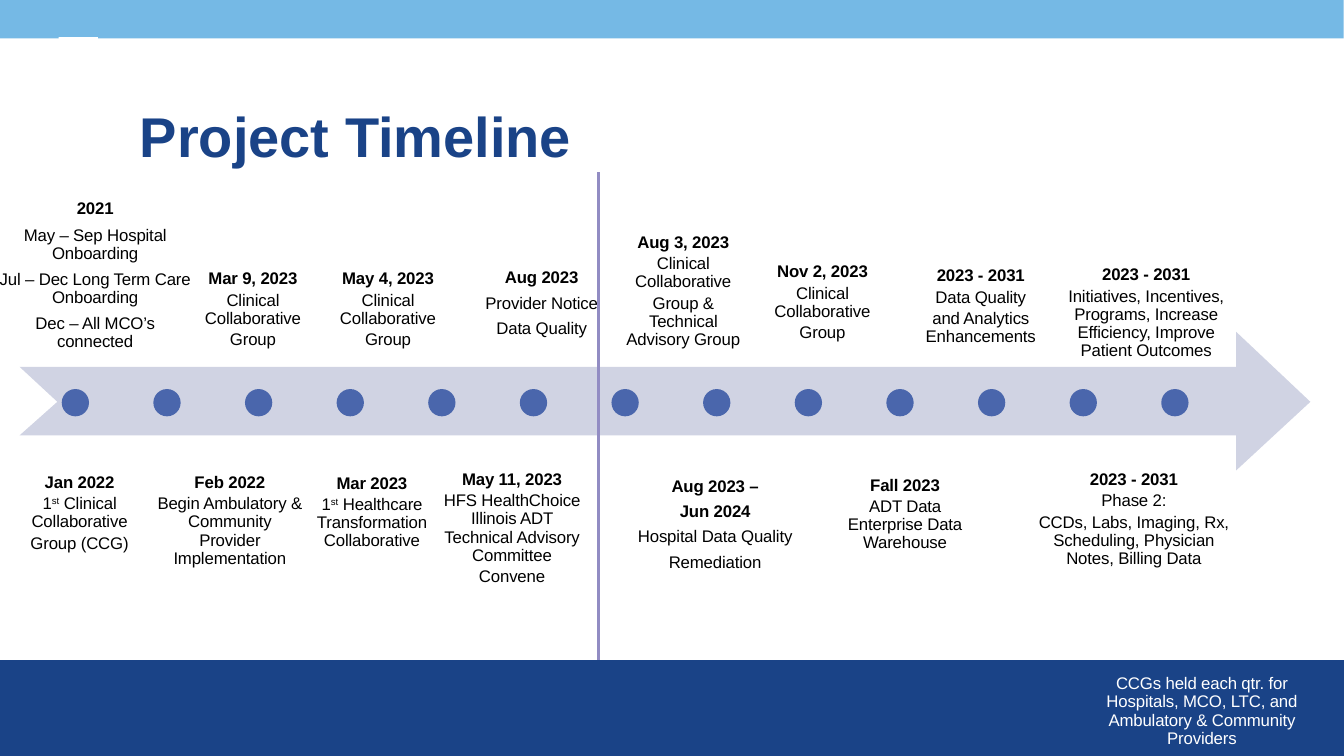
from dataclasses import dataclass
from typing import NamedTuple

from lxml import etree
from pptx import Presentation
from pptx.dml.color import RGBColor
from pptx.enum.shapes import MSO_CONNECTOR, MSO_SHAPE
from pptx.enum.text import MSO_ANCHOR, PP_ALIGN
from pptx.oxml.ns import qn
from pptx.util import Pt

RECT, OVAL = MSO_SHAPE.RECTANGLE, MSO_SHAPE.OVAL
STRAIGHT = MSO_CONNECTOR.STRAIGHT
TOP = MSO_ANCHOR.TOP
LEFT, CENTER = PP_ALIGN.LEFT, PP_ALIGN.CENTER


@dataclass(frozen=True)
class Theme:
    font: str = "Arial"
    navy: RGBColor = RGBColor(0x1A, 0x43, 0x87)
    sky: RGBColor = RGBColor(0x75, 0xB9, 0xE5)
    white: RGBColor = RGBColor(0xFF, 0xFF, 0xFF)
    black: RGBColor = RGBColor(0, 0, 0)
    arrow: RGBColor = RGBColor(0xD0, 0xD3, 0xE3)
    dot: RGBColor = RGBColor(0x4A, 0x66, 0xAC)
    rule: RGBColor = RGBColor(0x92, 0x8C, 0xC3)
    title: float = 40
    body: float = 12


THEME = Theme()


class Box(NamedTuple):
    x: float
    y: float
    w: float
    h: float


class Flow(NamedTuple):
    """Top inset, line spacing and gap before each later paragraph."""
    top: float
    line: float
    gap: float


SNUG = Flow(2.2, 0.9, 2.4)
LOW = Flow(5, 0.9, 2.4)
WIDE = Flow(6.2, 0.9, 5.8)
FIXED = Flow(2.9, Pt(15.1), 2.9)


class Event(NamedTuple):
    """A dated note; the first `heads` lines are bold, ^...^ is raised."""
    box: Box
    flow: Flow
    lines: tuple[str, ...]
    heads: int = 1


CCG = ("Clinical Collaborative", "Group")
EVENTS = (
    Event(Box(-2.2, 136.8, 140.4, 116.6), WIDE,
          ("2021", "May – Sep Hospital Onboarding",
           "Jul – Dec Long Term Care Onboarding", "Dec – All MCO’s connected")),
    Event(Box(126.7, 187.9, 108, 61.9), LOW, ("Mar 9, 2023", *CCG)),
    Event(Box(229.7, 187.9, 95, 61.9), LOW, ("May 4, 2023", *CCG)),
    Event(Box(329, 187.2, 115.9, 53.3), FIXED,
          ("Aug 2023", "Provider Notice", "Data Quality")),
    Event(Box(440.6, 162, 95, 87.8), LOW,
          ("Aug 3, 2023", "Clinical Collaborative",
           "Group & Technical Advisory Group")),
    Event(Box(540, 182.9, 95, 61.9), LOW, ("Nov 2, 2023", *CCG)),
    Event(Box(650.2, 188.6, 100.8, 77.8), SNUG,
          ("2023 - 2031", "Data Quality", "and Analytics Enhancements")),
    Event(Box(751, 187.9, 135.4, 87.8), SNUG,
          ("2023 - 2031", "Initiatives, Incentives, Programs, Increase "
           "Efficiency, Improve Patient Outcomes")),
    Event(Box(-4.3, 336.2, 122.4, 74.2), SNUG,
          ("Jan 2022", "1^st^ Clinical Collaborative", "Group (CCG)")),
    Event(Box(111.2, 336.2, 106, 72), SNUG,
          ("Feb 2022", "Begin Ambulatory & Community Provider Implementation")),
    Event(Box(218.2, 334.1, 95, 59.8), LOW,
          ("Mar 2023", "1^st^ Healthcare Transformation Collaborative")),
    Event(Box(315.4, 334.1, 100.8, 104.4), SNUG,
          ("May 11, 2023", "HFS HealthChoice Illinois ADT Technical Advisory "
           "Committee", "Convene")),
    Event(Box(452.9, 336.2, 115.9, 71.3), FIXED,
          ("Aug 2023 –", "Jun 2024", "Hospital Data Quality", "Remediation"), 2),
    Event(Box(599, 335.5, 95, 59.8), LOW,
          ("Fall 2023", "ADT Data Enterprise Data Warehouse")),
    Event(Box(734.4, 334.1, 151.2, 90.7), SNUG,
          ("2023 - 2031", "Phase 2:", "CCDs, Labs, Imaging, Rx, Scheduling, "
           "Physician Notes, Billing Data")),
)
NOTE = Event(Box(780.5, 480.2, 156.2, 54.7), SNUG,
             ("CCGs held each qtr. for Hospitals, MCO, LTC, and "
              "Ambulatory & Community Providers",), 0)
TITLE = Event(Box(92.9, 67, 800.6, 104.4), Flow(11, 0.9, 0),
              ("Project Timeline",))

BANDS = (
    (Box(-2.9, 471.6, 965.5, 72.7), THEME.navy),
    (Box(-0.7, 0, 960.5, 27.4), THEME.sky),
    (Box(41.8, 26.6, 28.1, 29.5), THEME.white),
)
ARROW = ((882.7, 336.2), (882.7, 311.3), (13.9, 311.3), (41, 286.7),
         (13.9, 261.6), (882.7, 261.6), (882.7, 236.9), (936.5, 286.7))
DOTS, STEP = 13, 65.45
DOT = Box(44.1, 277.9, 19.5, 19.5)


def paint(shape, color: RGBColor) -> None:
    shape.fill.solid()
    shape.fill.fore_color.rgb = color
    shape.line.fill.background()
    shape.shadow.inherit = False


def block(slide, kind, box: Box, color: RGBColor) -> None:
    paint(slide.shapes.add_shape(kind, *map(Pt, box)), color)


def arrow(slide) -> None:
    pen = slide.shapes.build_freeform(*ARROW[0], scale=Pt(1))
    pen.add_line_segments(ARROW[1:], close=True)
    paint(pen.convert_to_shape(), THEME.arrow)


def rule(slide) -> None:
    line = slide.shapes.add_connector(
        STRAIGHT, Pt(427.7), Pt(123.1), Pt(427.7), Pt(471.6))
    line.line.color.rgb = THEME.rule
    line.line.width = Pt(2.25)
    etree.SubElement(line._element.spPr, qn("a:effectLst"))


def write(slide, event: Event, color: RGBColor, size: float = THEME.body,
          align=CENTER, side: float = 0, track: int = -10) -> None:
    """Track is letter spacing in hundredths of a point."""
    frame = slide.shapes.add_textbox(*map(Pt, event.box)).text_frame
    frame.word_wrap = True
    frame.vertical_anchor = TOP
    frame.margin_left = frame.margin_right = Pt(side)
    frame.margin_top, frame.margin_bottom = Pt(event.flow.top), Pt(0)
    for i, text in enumerate(event.lines):
        para = frame.add_paragraph() if i else frame.paragraphs[0]
        para.alignment = align
        para.line_spacing = event.flow.line
        para.space_before = Pt(event.flow.gap if i else 0)
        for j, part in enumerate(text.split("^")):
            run = para.add_run()
            run.text = part
            run.font.name = THEME.font
            run.font.size = Pt(size)
            run.font.bold = i < event.heads
            run.font.color.rgb = color
            props = run._r.get_or_add_rPr()
            props.set("spc", str(track))
            if j % 2:
                props.set("baseline", "30000")


def main() -> None:
    deck = Presentation()
    deck.slide_width, deck.slide_height = Pt(960), Pt(540)
    slide = deck.slides.add_slide(deck.slide_layouts[6])
    for box, color in BANDS:
        block(slide, RECT, box, color)
    write(slide, TITLE, THEME.navy, THEME.title, LEFT, 7.2, 0)
    arrow(slide)
    for event in EVENTS:
        write(slide, event, THEME.black)
    write(slide, NOTE, THEME.white)
    rule(slide)
    for i in range(DOTS):
        block(slide, OVAL, DOT._replace(x=DOT.x + i * STEP), THEME.dot)
    deck.save("out.pptx")


if __name__ == "__main__":
    main()
